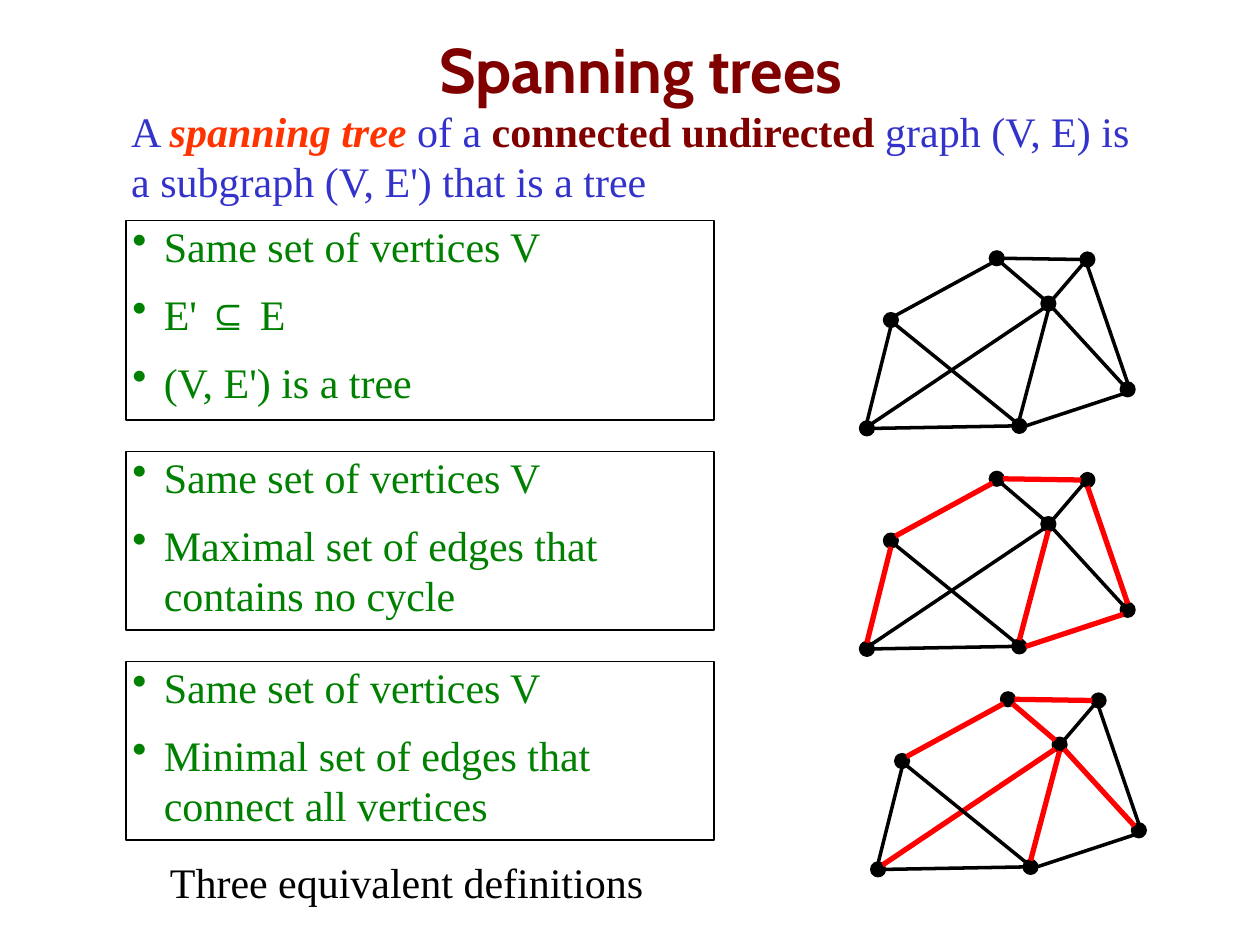
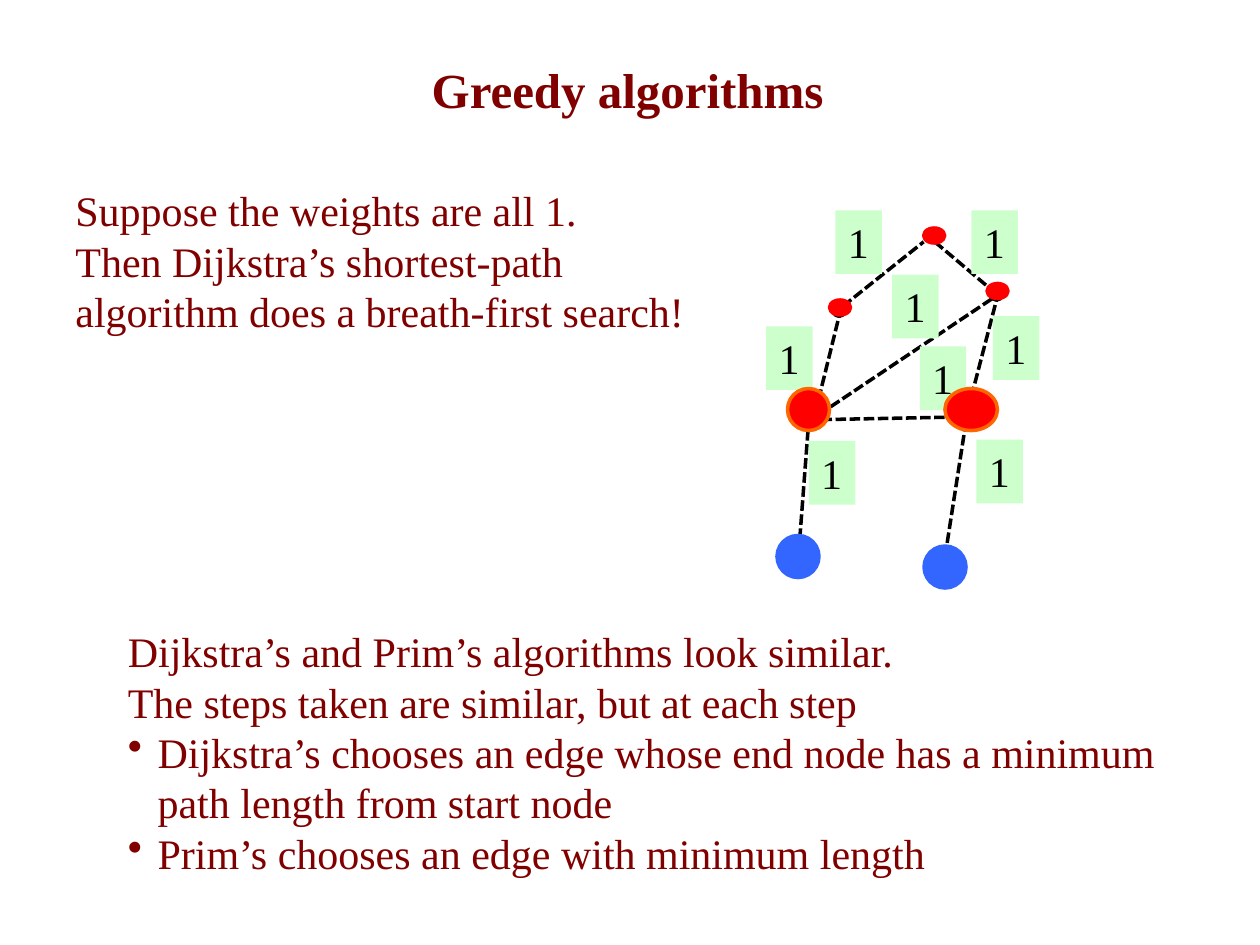
from math import sqrt

from lxml.etree import SubElement
from pptx import Presentation
from pptx.dml.color import RGBColor
from pptx.enum.dml import MSO_LINE
from pptx.enum.shapes import MSO_CONNECTOR, MSO_SHAPE
from pptx.enum.text import MSO_ANCHOR, MSO_AUTO_SIZE, PP_ALIGN
from pptx.oxml.ns import qn
from pptx.util import Pt

COLORS = {
    "maroon": "800000", "blue": "3333CC", "orange": "FF3300", "green": "008000",
    "black": "000000", "red": "FF0000", "rim": "FF6600", "mint": "CCFFCC", "azure": "3366FF",
}
SERIF = "Times New Roman"
BODY_SIZE = 24

SPANNING_TITLE = "Spanning trees"
SPANNING_INTRO = [
    ("A ", "blue", False, False),
    ("spanning tree ", "orange", True, True),
    ("of a ", "blue", False, False),
    ("connected undirected ", "maroon", True, False),
    ("graph (V, E) is a subgraph (V, E') that is a tree", "blue", False, False),
]
SAME_VERTICES = "Same set of vertices V"
DEFINITIONS = [
    ((72, 126, 336, 114), [SAME_VERTICES, "E' ⊆ E", "(V, E') is a tree"]),
    ((72, 258, 336, 102), [SAME_VERTICES, "Maximal set of edges that contains no cycle"]),
    ((72, 378, 336, 102), [SAME_VERTICES, "Minimal set of edges that connect all vertices"]),
]
SPANNING_SUMMARY = "Three equivalent definitions"

DOT = 7.2
VERTICES = {
    "left": (13.7, 35.3), "low left": (0, 97.2), "low mid": (87.1, 95.8), "hub": (103.7, 25.9),
    "right": (149, 74.9), "top left": (74.2, 0), "top right": (126, 0.7),
}
EDGES = [
    ("low left", "N", "left", "S"),
    ("low mid", "N", "hub", "S"),
    ("hub", "NE", "top right", "SW"),
    ("top left", "SE", "hub", "NW"),
    ("left", "NE", "top left", "SW"),
    ("low left", "NE", "hub", "SW"),
    ("top left", "E", "top right", "W"),
    ("left", "SE", "low mid", "NW"),
    ("hub", "SE", "right", "NW"),
    ("top right", "S", "right", "N"),
    ("low mid", "E", "right", "SW"),
    ("low left", "E", "low mid", "W"),
]
GRAPHS = [
    ((491.8, 144), []),
    ((491.8, 270), [("low left", "left"), ("low mid", "hub"), ("left", "top left"),
                    ("top left", "top right"), ("top right", "right"), ("low mid", "right")]),
    ((498.2, 396), [("low mid", "hub"), ("top left", "hub"), ("left", "top left"),
                    ("low left", "hub"), ("top left", "top right"), ("hub", "right")]),
]

GREEDY_TITLE = "Greedy algorithms"
GREEDY_PREMISE = [
    "Suppose the weights are all 1.",
    "Then Dijkstra’s shortest-path",
    "algorithm does a breath-first search!",
]
GREEDY_COMPARISON = [
    "Dijkstra’s and Prim’s algorithms look similar.",
    "The steps taken are similar, but at each step",
]
GREEDY_CHOICES = [
    "Dijkstra’s chooses an edge whose end node has a minimum path length from start node",
    "Prim’s chooses an edge with minimum length",
]
WEIGHT = "1"
WEIGHT_SPOTS = [
    (477.4, 120.2), (525.6, 198), (555.1, 120.2), (567.4, 180.7),
    (437.8, 186.5), (509.8, 157), (558, 251.3), (462.2, 252),
]
WEIGHTED_EDGES = [
    ((465.8, 236.2), (479.5, 180.7)),
    ((553, 234.7), (570.2, 168.5)),
    ((534.2, 138.2), (566.6, 165.6)),
    ((481.7, 175), (527.8, 138.2)),
    ((468, 236.9), (570.2, 168.5)),
    ((469.4, 239.8), (549.4, 238.3)),
    ((540, 318.2), (552.2, 239.8)),
    ((455.8, 324), (462.2, 239.8)),
]
NODES = [
    ((475.9, 173.5, DOT, DOT), "black", "black"),
    ((565.9, 164.2, DOT, DOT), "black", "black"),
    ((527.8, 130.3, 12, 8.6), "red", "red"),
    ((474, 171.4, 12, 8.6), "red", "red"),
    ((564, 162, 12, 8.6), "red", "red"),
    ((450, 222, 24, 24), "red", "rim"),
    ((540, 222, 30, 24), "red", "rim"),
    ((444, 306, 24, 24), "azure", "azure"),
    ((528, 312, 24, 24), "azure", "azure"),
]


def rgb(color):
    return RGBColor.from_string(COLORS[color])


def pts(values):
    return [Pt(value) for value in values]


def add_run(paragraph, text, color, bold=False, italic=False, size=BODY_SIZE, font=SERIF):
    run = paragraph.add_run()
    run.text = text
    run.font.name = font
    run.font.size = Pt(size)
    run.font.bold = bold
    run.font.italic = italic
    run.font.color.rgb = rgb(color)


def indent(paragraph, margin, first):
    props = paragraph._p.get_or_add_pPr()
    props.set("marL", str(Pt(margin)))
    props.set("indent", str(Pt(first)))
    return props


def add_bullet(paragraph, color, margin, hang):
    props = indent(paragraph, margin, -hang)
    SubElement(SubElement(props, qn("a:buClr")), qn("a:srgbClr"), val=COLORS[color])
    SubElement(props, qn("a:buChar"), char="•")


def set_frame(frame, insets=(7.2, 3.6, 7.2, 3.6), wrap=True, anchor=MSO_ANCHOR.TOP):
    frame.auto_size = MSO_AUTO_SIZE.NONE
    frame.word_wrap = wrap
    frame.vertical_anchor = anchor
    (frame.margin_left, frame.margin_top,
     frame.margin_right, frame.margin_bottom) = pts(insets)
    return frame


def next_paragraph(frame):
    first = frame.paragraphs[0]
    return frame.add_paragraph() if first.runs else first


def add_text(slide, box, **frame_options):
    return set_frame(slide.shapes.add_textbox(*pts(box)).text_frame, **frame_options)


def add_titled_slide(deck, text, box, right_inset, size, font):
    slide = deck.slides.add_slide(deck.slide_layouts[5])
    title = slide.shapes.title
    title.left, title.top, title.width, title.height = pts(box)
    frame = set_frame(title.text_frame, (4.5, 4.5, right_inset, 4.5), anchor=MSO_ANCHOR.MIDDLE)
    heading = frame.paragraphs[0]
    heading.alignment = PP_ALIGN.CENTER
    indent(heading, 3, -3)
    add_run(heading, text, "maroon", bold=True, size=size, font=font)
    return slide


def add_preset(shapes, preset, box, fill=None, line=None, width=2):
    shape = shapes.add_shape(preset, *pts(box))
    shape.shadow.inherit = False
    if fill:
        shape.fill.solid()
        shape.fill.fore_color.rgb = rgb(fill)
    else:
        shape.fill.background()
    if line:
        shape.line.color.rgb = rgb(line)
        shape.line.width = Pt(width)
    else:
        shape.line.fill.background()
    return shape


def add_edge(shapes, start, end, color="black", width=2, dash=None):
    edge = shapes.add_connector(MSO_CONNECTOR.STRAIGHT, *pts(start + end))
    edge.line.color.rgb = rgb(color)
    edge.line.width = Pt(width)
    if dash:
        edge.line.dash_style = dash
    SubElement(edge._element.spPr, qn("a:effectLst"))


def rim_point(vertex, compass):
    dx = ("E" in compass) - ("W" in compass)
    dy = ("S" in compass) - ("N" in compass)
    reach = DOT / 2 / sqrt(dx * dx + dy * dy)
    x, y = VERTICES[vertex]
    return x + DOT / 2 + dx * reach, y + DOT / 2 + dy * reach


def add_graph(slide, origin, tree):
    shapes = slide.shapes.add_group_shape().shapes
    left, top = origin
    for x, y in VERTICES.values():
        add_preset(shapes, MSO_SHAPE.OVAL, (left + x, top + y, DOT, DOT), "black", "black")
    for source, leaving, target, entering in EDGES:
        ends = [(left + x, top + y) for x, y in
                (rim_point(source, leaving), rim_point(target, entering))]
        in_tree = (source, target) in tree
        add_edge(shapes, *ends, color="red" if in_tree else "black", width=3 if in_tree else 2)


def add_definition(slide, box, conditions):
    panel = add_preset(slide.shapes, MSO_SHAPE.RECTANGLE, box, line="black", width=1)
    frame = set_frame(panel.text_frame, (0, 0, 3, 0))
    for condition in conditions:
        paragraph = next_paragraph(frame)
        paragraph.alignment = PP_ALIGN.LEFT
        paragraph.space_before = Pt(16 if condition == SAME_VERTICES else 10)
        add_bullet(paragraph, "green", 21.6, 18)
        add_run(paragraph, condition, "green")


def build_spanning(deck):
    slide = add_titled_slide(deck, SPANNING_TITLE, (48, 18, 642, 42), 10, 36, "Cabin")
    intro = add_text(slide, (72, 60, 585, 71), insets=(0, 0, 3, 0)).paragraphs[0]
    indent(intro, 3, 0)
    for part in SPANNING_INTRO:
        add_run(intro, *part)
    for definition in DEFINITIONS:
        add_definition(slide, *definition)
    for graph in GRAPHS:
        add_graph(slide, *graph)
    summary = add_text(slide, (90, 486, 286.5, 36.5), wrap=False)
    add_run(summary.paragraphs[0], SPANNING_SUMMARY, "black")


def build_greedy(deck):
    slide = add_titled_slide(deck, GREEDY_TITLE, (54, 30, 612, 42), 7.2, 28, SERIF)
    premise = add_text(slide, (36, 102, 660, 94.5))
    for sentence in GREEDY_PREMISE:
        add_run(next_paragraph(premise), sentence, "maroon")

    shapes = slide.shapes.add_group_shape().shapes
    for start, end in WEIGHTED_EDGES:
        add_edge(shapes, start, end, dash=MSO_LINE.SQUARE_DOT)
    for spot in WEIGHT_SPOTS:
        label = add_preset(shapes, MSO_SHAPE.RECTANGLE, spot + (26.6, 36.4), "mint")
        paragraph = set_frame(label.text_frame, wrap=False).paragraphs[0]
        paragraph.alignment = PP_ALIGN.LEFT
        add_run(paragraph, WEIGHT, "black")
    for box, fill, rim in NODES:
        add_preset(shapes, MSO_SHAPE.OVAL, box, fill, rim)

    comparison = add_text(slide, (66, 354, 606, 152.5))
    for sentence in GREEDY_COMPARISON:
        add_run(next_paragraph(comparison), sentence, "maroon")
    for choice in GREEDY_CHOICES:
        paragraph = next_paragraph(comparison)
        add_bullet(paragraph, "maroon", 17, 17)
        add_run(paragraph, choice, "maroon")


def main():
    deck = Presentation()
    deck.slide_width, deck.slide_height = Pt(720), Pt(540)
    build_spanning(deck)
    build_greedy(deck)
    deck.save("out.pptx")


if __name__ == "__main__":
    main()
